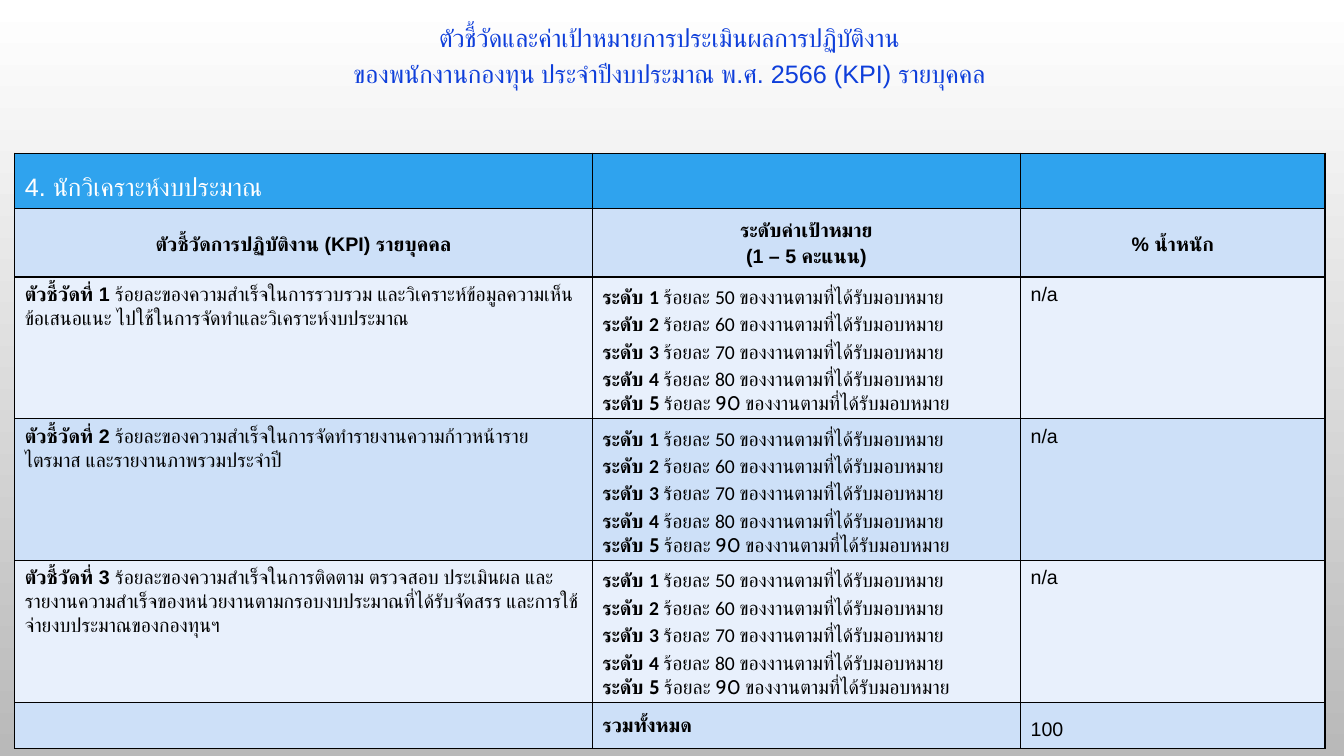
import dataclasses
import typing

import lxml.etree
import pptx
import pptx.dml.color
import pptx.enum.text
import pptx.oxml.ns
import pptx.util

PX = 9525
WHITE = pptx.dml.color.RGBColor(0xFF, 0xFF, 0xFF)
BLACK = pptx.dml.color.RGBColor(0x00, 0x00, 0x00)
GREY = pptx.dml.color.RGBColor(0xB9, 0xB9, 0xB9)
TITLE_BLUE = pptx.dml.color.RGBColor(0x0E, 0x3E, 0xDA)
BAND_BLUE = pptx.dml.color.RGBColor(0x2F, 0xA3, 0xEE)
MID_BLUE = pptx.dml.color.RGBColor(0xCD, 0xE0, 0xF8)
PALE_BLUE = pptx.dml.color.RGBColor(0xE8, 0xF0, 0xFC)
CENTER = pptx.enum.text.PP_ALIGN.CENTER
LEFT = pptx.enum.text.PP_ALIGN.LEFT
MIDDLE = pptx.enum.text.MSO_ANCHOR.MIDDLE
TOP = pptx.enum.text.MSO_ANCHOR.TOP
EXACT = pptx.util.Pt(16.8)

COLUMNS = [550, 408, 290]
ROWS = [52, 65, 135, 135, 135, 44]
TITLE = [
    "ตัวชี้วัดและค่าเป้าหมายการประเมินผลการปฏิบัติงาน",
    "ของพนักงานกองทุน ประจำปีงบประมาณ พ.ศ. 2566 (KPI) รายบุคคล",
]
INDICATORS = [
    "ร้อยละของความสำเร็จในการรวบรวม และวิเคราะห์ข้อมูลความเห็น ข้อเสนอแนะ ไปใช้ในการจัดทำและวิเคราะห์งบประมาณ",
    "ร้อยละของความสำเร็จในการจัดทำรายงานความก้าวหน้ารายไตรมาส และรายงานภาพรวมประจำปี",
    "ร้อยละของความสำเร็จในการติดตาม ตรวจสอบ ประเมินผล และรายงานความสำเร็จของหน่วยงานตามกรอบงบประมาณที่ได้รับจัดสรร และการใช้จ่ายงบประมาณของกองทุนฯ",
]


@dataclasses.dataclass
class Line:
    """One paragraph: a bold lead followed by plain text."""

    lead: str = ""
    text: str = ""
    spacing: typing.Any = None
    align: typing.Any = LEFT
    face: str = "Arial"
    size: int = 14
    color: pptx.dml.color.RGBColor = BLACK


@dataclasses.dataclass
class Entry:
    """The contents of one table cell."""

    lines: list[Line]
    fill: pptx.dml.color.RGBColor = MID_BLUE
    anchor: typing.Any = TOP


def write_lines(frame: typing.Any, lines: list[Line]) -> None:
    """Write the lines into a text frame."""
    for index, line in enumerate(lines):
        para = frame.add_paragraph() if index else frame.paragraphs[0]
        para.alignment = line.align
        para.line_spacing = line.spacing
        for text, bold in ((line.lead, True), (line.text, False)):
            if not text:
                continue
            span = para.add_run()
            span.text = text
            formats = {"name": line.face, "size": pptx.util.Pt(line.size), "bold": bold}
            for name, value in formats.items():
                setattr(span.font, name, value)
            span.font.color.rgb = line.color


def draw_borders(cell: typing.Any) -> None:
    """Give a cell a thin black border on every side."""
    properties = cell._tc.get_or_add_tcPr()
    for side in ("a:lnL", "a:lnR", "a:lnT", "a:lnB"):
        border = lxml.etree.SubElement(properties, pptx.oxml.ns.qn(side), w="12700")
        solid = lxml.etree.SubElement(border, pptx.oxml.ns.qn("a:solidFill"))
        lxml.etree.SubElement(solid, pptx.oxml.ns.qn("a:srgbClr"), val=str(BLACK))


def level_lines() -> list[Line]:
    """Build the five target levels of an indicator."""
    return [
        Line(
            f"ระดับ {level} ",
            f"ร้อยละ {40 + 10 * level} ของงานตามที่ได้รับมอบหมาย",
            spacing=1.15 if level < 5 else None,
            face="Calibri" if level < 5 else "Cabin",
        )
        for level in range(1, 6)
    ]


def table_entries() -> list[list[Entry]]:
    """Build the rows of the indicator table."""
    heading = Line(text="4. นักวิเคราะห์งบประมาณ", spacing=1.5, size=18, color=WHITE)
    headers = [
        ["ตัวชี้วัดการปฏิบัติงาน (KPI) รายบุคคล"],
        ["ระดับค่าเป้าหมาย", "(1 – 5 คะแนน)"],
        ["% น้ำหนัก"],
    ]
    rows = [
        [Entry(lines, BAND_BLUE, MIDDLE) for lines in ([heading], [], [])],
        [
            Entry([Line(text, spacing=1.2, align=CENTER) for text in texts], anchor=MIDDLE)
            for texts in headers
        ],
    ]
    for number, indicator in enumerate(INDICATORS, 1):
        fill = PALE_BLUE if number % 2 else MID_BLUE
        columns = (
            [Line(f"ตัวชี้วัดที่ {number} ", indicator, EXACT)],
            level_lines(),
            [Line(text="n/a", spacing=EXACT)],
        )
        rows.append([Entry(lines, fill) for lines in columns])
    total = ([], [Line("รวมทั้งหมด", spacing=1.5)], [Line(text="100", spacing=1.5)])
    rows.append([Entry(lines) for lines in total])
    return rows


def draw_background(page: typing.Any) -> None:
    """Shade the page from white at the top to grey."""
    fill = page.background.fill
    fill.gradient()
    fill.gradient_angle = 270
    for stop, position, color in zip(fill.gradient_stops, (0, 1), (WHITE, GREY)):
        stop.position = position
        stop.color.rgb = color


def draw_title(page: typing.Any) -> None:
    """Add the centred title."""
    box = page.shapes.add_textbox(0, 11 * PX, 1275 * PX, 118 * PX)
    box.text_frame.word_wrap = True
    write_lines(
        box.text_frame,
        [Line(text=text, spacing=1.2, align=CENTER, size=18, color=TITLE_BLUE) for text in TITLE],
    )


def draw_table(page: typing.Any) -> None:
    """Add the indicator table."""
    frame = page.shapes.add_table(
        len(ROWS), len(COLUMNS), 14 * PX, 146 * PX, sum(COLUMNS) * PX, sum(ROWS) * PX
    )
    table = frame.table
    for name, value in {"first_row": False, "horz_banding": False}.items():
        setattr(table, name, value)
    for column, width in zip(table.columns, COLUMNS):
        column.width = width * PX
    for row, height, entries in zip(table.rows, ROWS, table_entries()):
        row.height = height * PX
        for cell, entry in zip(row.cells, entries):
            draw_borders(cell)
            cell.fill.solid()
            cell.fill.fore_color.rgb = entry.fill
            cell.vertical_anchor = entry.anchor
            write_lines(cell.text_frame, entry.lines)


def main() -> None:
    """Build and save the deck."""
    deck = pptx.Presentation()
    deck.slide_width = 1280 * PX
    deck.slide_height = 720 * PX
    page = deck.slides.add_slide(deck.slide_layouts[6])
    draw_background(page)
    draw_title(page)
    draw_table(page)
    deck.save("out.pptx")


if __name__ == "__main__":
    main()
